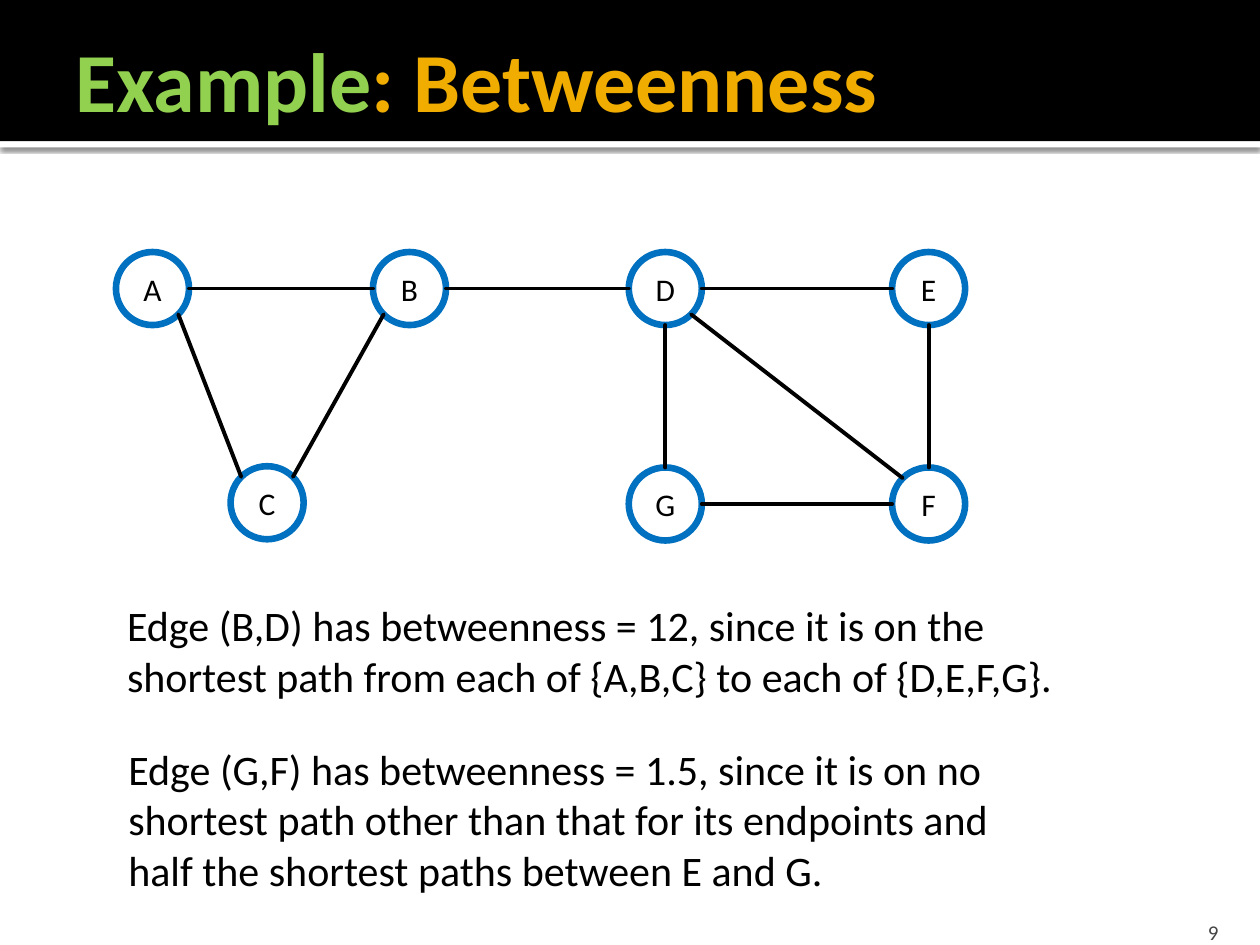
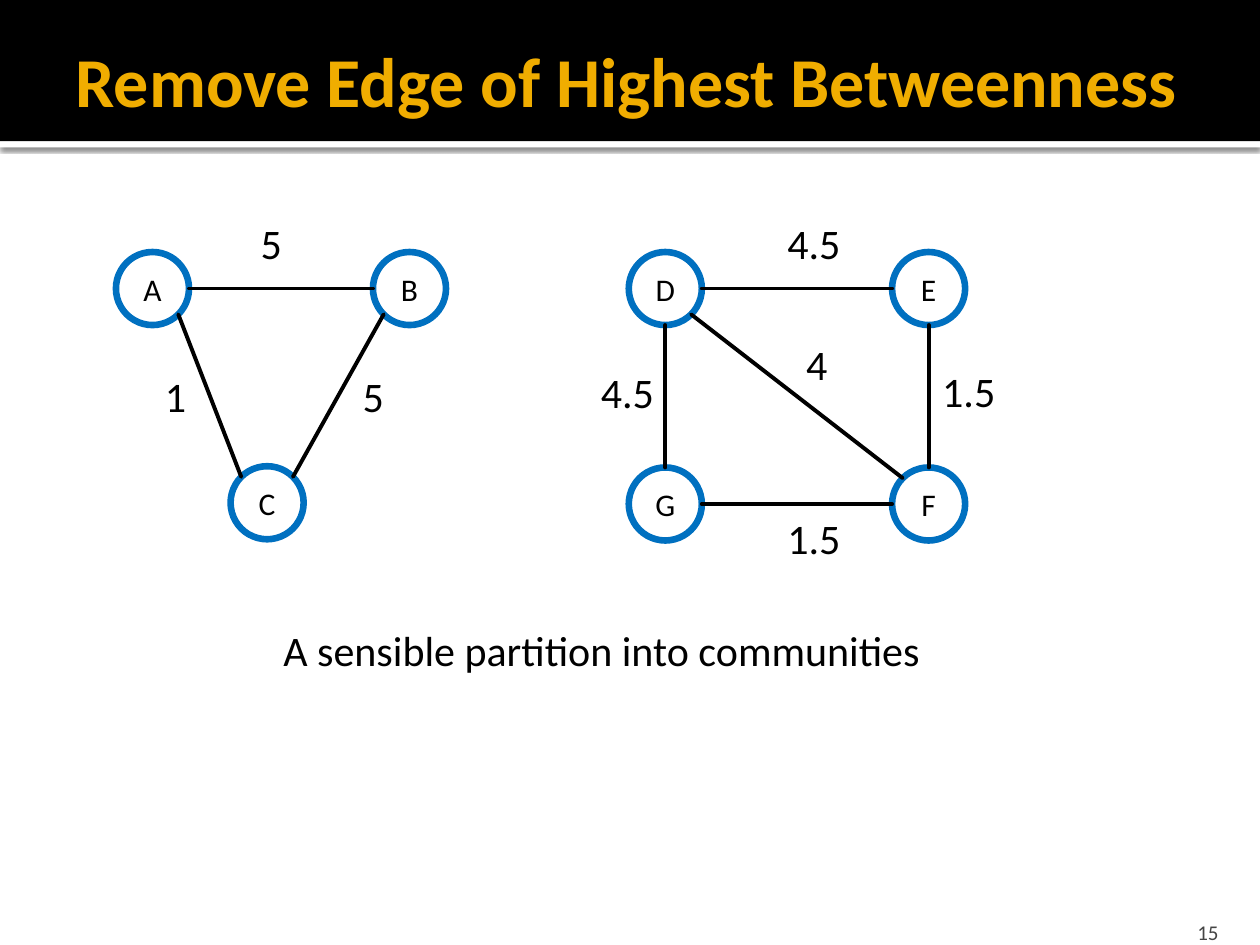
from lxml import etree
from pptx import Presentation
from pptx import util as u
from pptx.dml.color import RGBColor
from pptx.enum import shapes, text
from pptx.oxml import ns

FONT = "Calibri"
BLACK, WHITE, GREY = "000000", "FFFFFF", "454545"
GREEN, AMBER, BLUE = "92D050", "F0AD00", "0070C0"

GRAPH_LEFT, GRAPH_TOP = 0.92, 2.0
NODE_SIZE = 0.58
NODES = {
    "A": (0, 0), "D": (4.07, 0), "C": (0.91, 1.7), "E": (6.16, 0),
    "F": (6.16, 1.71), "G": (4.07, 1.71), "B": (2.04, 0),
}
DIAGONAL = 0.5 ** 0.5
SITES = {
    "top": (0, -1), "left": (-1, 0), "bottom": (0, 1), "right": (1, 0),
    "top left": (-DIAGONAL, -DIAGONAL), "top right": (DIAGONAL, -DIAGONAL),
    "bottom left": (-DIAGONAL, DIAGONAL), "bottom right": (DIAGONAL, DIAGONAL),
}
BRIDGE = ("B", "right", "D", "left")
COMMUNITY_EDGES = [
    ("A", "right", "B", "left"),
    ("A", "bottom right", "C", "top left"),
    ("C", "top right", "B", "bottom left"),
    ("D", "right", "E", "left"),
    ("D", "bottom", "G", "top"),
    ("E", "bottom", "F", "top"),
    ("G", "right", "F", "left"),
    ("D", "bottom right", "F", "top left"),
]
BETWEENNESS = [
    ("5", 1.05, -0.32), ("5", 1.86, 0.89), ("4.5", 5.23, -0.32),
    ("4.5", 3.75, 0.86), ("4", 5.38, 0.64), ("1.5", 6.46, 0.85),
    ("1.5", 5.23, 2.02), ("1", 0.29, 0.89),
]


def color(hex_code):
    return RGBColor.from_string(hex_code)


def inches(*lengths):
    return [u.Inches(length) for length in lengths]


def add_run(paragraph, words, size, hex_code=BLACK, bold=False):
    run = paragraph.add_run()
    run.text = words
    run.font.name = FONT
    run.font.size = u.Pt(size)
    run.font.bold = bold
    run.font.color.rgb = color(hex_code)


def set_insets(frame, left, top, right, bottom):
    (frame.margin_left, frame.margin_top,
     frame.margin_right, frame.margin_bottom) = inches(left, top, right, bottom)


def add_text(canvas, box, lines, size=24, hex_code=BLACK, wrap=False):
    frame = canvas.add_textbox(*inches(*box)).text_frame
    frame.word_wrap = wrap
    for index, line in enumerate(lines):
        paragraph = frame.add_paragraph() if index else frame.paragraphs[0]
        add_run(paragraph, line, size, hex_code)
    return frame


def add_band(slide, top, height, hex_code):
    band = slide.shapes.add_shape(
        shapes.MSO_SHAPE.RECTANGLE, *inches(0, top, 10, height))
    band.shadow.inherit = False
    band.fill.solid()
    band.fill.fore_color.rgb = color(hex_code)
    band.line.fill.background()
    slide.shapes.title._element.addprevious(band._element)
    return band


def add_soft_shadow(band):
    effects = band._element.spPr.find(ns.qn("a:effectLst"))
    shadow = etree.SubElement(
        effects, ns.qn("a:outerShdw"), blurRad=str(u.Pt(2.5)),
        dist=str(u.Pt(0.8)), dir="5400000", algn="t", rotWithShape="0")
    tint = etree.SubElement(shadow, ns.qn("a:srgbClr"), val=BLACK)
    etree.SubElement(tint, ns.qn("a:alpha"), val="60000")


def add_header(slide, title_runs, size):
    add_soft_shadow(add_band(slide, 1.12, 0.05, WHITE))
    add_band(slide, 0, 1.12, BLACK)
    title = slide.shapes.title
    title.left, title.top, title.width, title.height = inches(0.5, 0.17, 9.5, 0.92)
    frame = title.text_frame
    frame.auto_size = text.MSO_AUTO_SIZE.NONE
    frame.vertical_anchor = text.MSO_ANCHOR.MIDDLE
    set_insets(frame, 0.1, 0.05, 0.05, 0.05)
    heading = frame.paragraphs[0]
    heading.alignment = text.PP_ALIGN.LEFT
    for words, hex_code in title_runs:
        add_run(heading, words, size, hex_code, bold=True)


def add_page_number(slide, number):
    frame = add_text(slide.shapes, (8.97, 7.2, 0.8, 0.3), [number], 12, GREY, wrap=True)
    frame.vertical_anchor = text.MSO_ANCHOR.BOTTOM
    set_insets(frame, 0.1, 0.05, 0.1, 0)
    frame.paragraphs[0].alignment = text.PP_ALIGN.RIGHT


def add_node(canvas, letter, left, top):
    node = canvas.add_shape(
        shapes.MSO_SHAPE.OVAL, *inches(left, top, NODE_SIZE, NODE_SIZE))
    node.shadow.inherit = False
    node.fill.background()
    node.line.color.rgb = color(BLUE)
    node.line.width = u.Pt(3.78)
    frame = node.text_frame
    set_insets(frame, 0, 0, 0, 0)
    frame.vertical_anchor = text.MSO_ANCHOR.MIDDLE
    frame.paragraphs[0].alignment = text.PP_ALIGN.CENTER
    add_run(frame.paragraphs[0], letter, 18)


def site_point(left, top, letter, site):
    radius = NODE_SIZE / 2
    x, y = NODES[letter]
    dx, dy = SITES[site]
    return inches(left + x + radius * (1 + dx), top + y + radius * (1 + dy))


def add_edge(canvas, start, end):
    edge = canvas.add_connector(shapes.MSO_CONNECTOR.STRAIGHT, *start, *end)
    edge.line.color.rgb = color(BLACK)
    edge.line.width = u.Pt(2.25)
    edge.line._ln.set("cap", "rnd")
    etree.SubElement(edge._element.spPr, ns.qn("a:effectLst"))


def add_graph(canvas, left, top, edges):
    for letter, (x, y) in NODES.items():
        add_node(canvas, letter, left + x, top + y)
    for source, source_site, target, target_site in edges:
        add_edge(canvas, site_point(left, top, source, source_site),
                 site_point(left, top, target, target_site))


def add_betweenness(canvas, left, top):
    for value, x, y in BETWEENNESS:
        width = 0.36 if len(value) == 1 else 0.63
        add_text(canvas, (left + x, top + y, width, 0.5), [value])


def new_slide(deck, title_runs, title_size, number):
    slide = deck.slides.add_slide(deck.slide_layouts[5])
    add_header(slide, title_runs, title_size)
    add_page_number(slide, number)
    return slide


def build_example(deck):
    slide = new_slide(deck, [("Example", GREEN), (": Betweenness", AMBER)], 48, "9")
    graph = slide.shapes.add_group_shape()
    add_graph(graph.shapes, GRAPH_LEFT, GRAPH_TOP, COMMUNITY_EDGES + [BRIDGE])
    add_text(slide.shapes, (0.91, 4.71, 7.99, 0.91), [
        "Edge (B,D) has betweenness = 12, since it is on the "
        "shortest path from each of {A,B,C} to each of {D,E,F,G}.",
    ], wrap=True)
    add_text(slide.shapes, (0.92, 5.85, 7.14, 1.31), [
        "Edge (G,F) has betweenness = 1.5, since it is on no",
        "shortest path other than that for its endpoints and",
        "half the shortest paths between E and G.",
    ])


def build_partition(deck):
    slide = new_slide(deck, [("Remove Edge of Highest Betweenness", AMBER)], 40, "15")
    add_graph(slide.shapes, GRAPH_LEFT, GRAPH_TOP, COMMUNITY_EDGES)
    add_betweenness(slide.shapes, GRAPH_LEFT, GRAPH_TOP)
    add_text(slide.shapes, (2.15, 4.91, 5.38, 0.5),
             ["A sensible partition into communities"])


def main():
    deck = Presentation()
    deck.slide_width, deck.slide_height = inches(10, 7.5)
    build_example(deck)
    build_partition(deck)
    deck.save("out.pptx")


if __name__ == "__main__":
    main()
